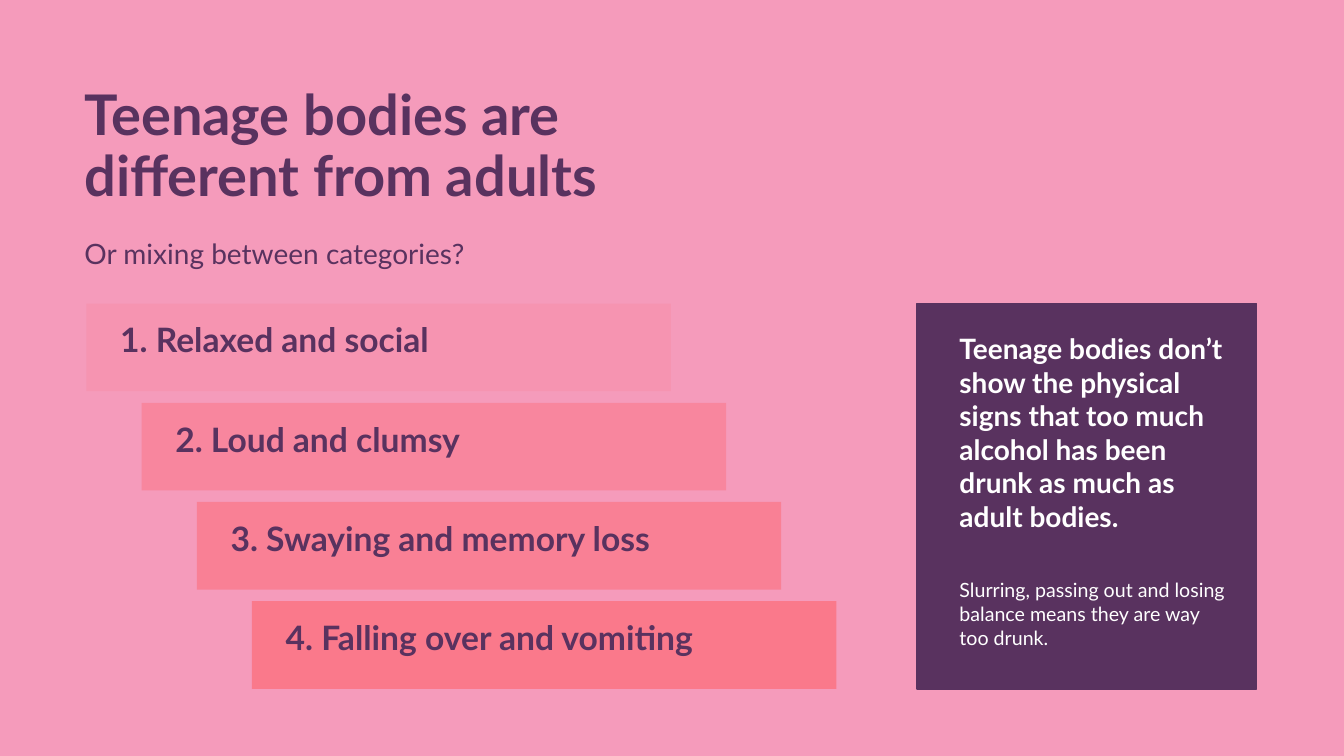
import pptx
import pptx.dml.color
import pptx.enum.shapes
import pptx.enum.text
import pptx.util
from lxml import etree
from pptx.oxml.ns import qn

Cm = pptx.util.Cm
ANCHOR = pptx.enum.text.MSO_ANCHOR

TITLE = "Teenage bodies are different from adults"
QUESTION = "Or mixing between categories?"
# stage label, label width in cm, opacity of its bar in percent
STAGES = [
    ("1. Relaxed and social", 10.9, 10),
    ("2. Loud and clumsy", 10.9, 30),
    ("3. Swaying and memory loss", 13.87, 40),
    ("4. Falling over and vomiting", 13.87, 50),
]
WARNING = ("Teenage bodies don’t show the physical signs that too much alcohol "
           "has been drunk as much as adult bodies.")
WARNING_DETAIL = "Slurring, passing out and losing balance means they are way too drunk."

THEME = {
    "font": "Lato",
    "pink": "F59BBB", "purple": "59325F", "coral": "FF585D", "white": "FFFFFF",
    "title": 40, "stage": 24, "lead": 20, "detail": 14,
}

# all in cm
MARGIN_LEFT = 1.88
STAIRS_LEFT, STAIRS_TOP = 2.18, 7.65
STEP_RIGHT, STEP_DOWN = 1.39, 2.5
BAR_WIDTH, BAR_HEIGHT = 14.73, 2.21
LABEL_INDENT, LABEL_DROP, LABEL_HEIGHT = 0.6, 0.27, 1.27
PANEL_LEFT, PANEL_WIDTH = 23.11, 8.56
PANEL_HEIGHT = (len(STAGES) - 1) * STEP_DOWN + BAR_HEIGHT
PANEL_TEXT_LEFT, PANEL_TEXT_WIDTH = 23.93, 7.24


def rgb(name):
    return pptx.dml.color.RGBColor.from_string(THEME[name])


def add_block(slide, left, top, width, height, color, opacity=100):
    """Add a borderless rectangle, see-through below 100 percent opacity."""
    block = slide.shapes.add_shape(
        pptx.enum.shapes.MSO_SHAPE.RECTANGLE,
        Cm(left), Cm(top), Cm(width), Cm(height))
    block.shadow.inherit = False
    block.fill.solid()
    block.fill.fore_color.rgb = rgb(color)
    block.line.fill.background()
    if opacity < 100:
        srgb = block.fill._xPr.find(".//" + qn("a:srgbClr"))
        etree.SubElement(srgb, qn("a:alpha"), val=str(opacity * 1000))
    return block


def add_text(slide, text, left, top, width, height, size, color="purple",
             bold=False, anchor=ANCHOR.TOP):
    box = slide.shapes.add_textbox(Cm(left), Cm(top), Cm(width), Cm(height))
    frame = box.text_frame
    frame.word_wrap = True
    frame.vertical_anchor = anchor
    frame.text = text
    font = frame.paragraphs[0].runs[0].font
    font.name = THEME["font"]
    font.size = pptx.util.Pt(THEME[size])
    font.bold = bold
    font.color.rgb = rgb(color)
    return frame


def add_heading(slide):
    title = add_text(slide, TITLE, MARGIN_LEFT, 2.08, 18.21, 3.84, "title", bold=True)
    title.margin_right = Cm(1)
    title.paragraphs[0].line_spacing = 0.9
    add_text(slide, QUESTION, MARGIN_LEFT, 5.89, 12.67, 1.04, "lead",
             anchor=ANCHOR.BOTTOM)


def add_stairs(slide):
    for step, (label, label_width, opacity) in enumerate(STAGES):
        left = STAIRS_LEFT + step * STEP_RIGHT
        top = STAIRS_TOP + step * STEP_DOWN
        add_block(slide, left, top, BAR_WIDTH, BAR_HEIGHT, "coral", opacity)
        add_text(slide, label, left + LABEL_INDENT, top + LABEL_DROP,
                 label_width, LABEL_HEIGHT, "stage", bold=True)


def add_warning_panel(slide):
    panel = add_block(slide, PANEL_LEFT, STAIRS_TOP, PANEL_WIDTH, PANEL_HEIGHT, "purple")
    panel.line.color.rgb = rgb("purple")
    panel.line.width = pptx.util.Pt(1)
    add_text(slide, WARNING, PANEL_TEXT_LEFT, 8.23, PANEL_TEXT_WIDTH, 6.25,
             "lead", "white", bold=True)
    add_text(slide, WARNING_DETAIL, PANEL_TEXT_LEFT, 14.45, PANEL_TEXT_WIDTH, 2.06,
             "detail", "white")


def main():
    deck = pptx.Presentation()
    deck.slide_width, deck.slide_height = Cm(33.87), Cm(19.05)
    slide = deck.slides.add_slide(deck.slide_layouts[6])
    slide.background.fill.solid()
    slide.background.fill.fore_color.rgb = rgb("pink")
    add_heading(slide)
    add_warning_panel(slide)
    add_stairs(slide)
    deck.save("out.pptx")


if __name__ == "__main__":
    main()
